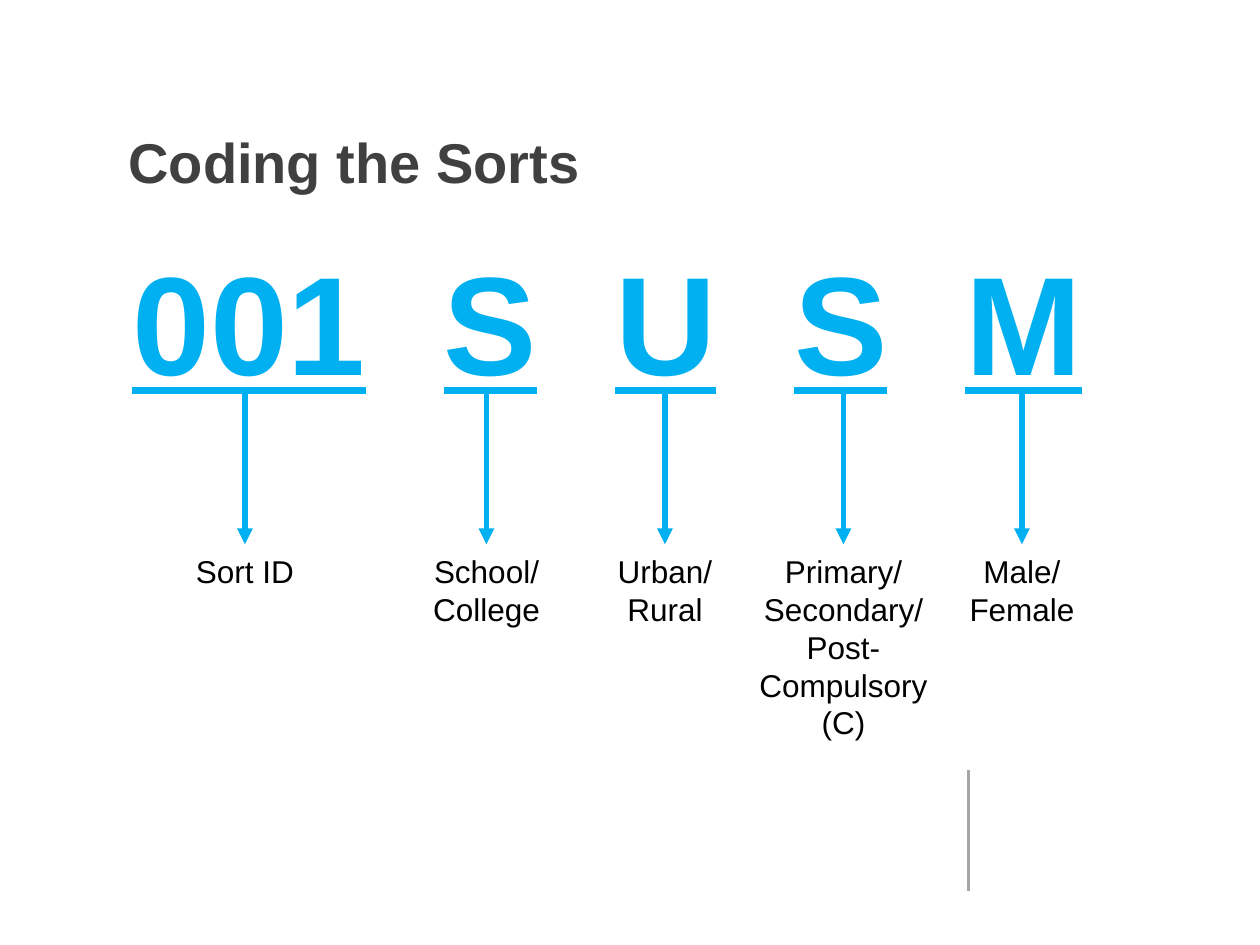
from lxml.etree import SubElement
from pptx import Presentation
from pptx.dml.color import RGBColor as RGB
from pptx.enum.shapes import MSO_CONNECTOR as Conn
from pptx.enum.text import MSO_ANCHOR as Anchor, MSO_AUTO_SIZE as Fit, PP_ALIGN as Align
from pptx.oxml.ns import qn
from pptx.util import Pt

HUES = {"code": "00B0F0", "title": "404040", "label": "000000", "rule": "A6A6A6"}


def style(font, hue, **values):
    font.name = "Arial"
    font.color.rgb = RGB.from_string(HUES[hue])
    for key, val in values.items():
        setattr(font, key, val)


def draw(x, top, end, hue, width):
    """Draw a vertical line without shadow and return its line element."""
    line = slide.shapes.add_connector(Conn.STRAIGHT, Pt(x), Pt(top), Pt(x), Pt(end))
    line.line.color.rgb = RGB.from_string(HUES[hue])
    line.line.width = Pt(width)
    SubElement(line._element.spPr, qn("a:effectLst"))
    return line.line._get_or_add_ln()


deck = Presentation()
deck.slide_width, deck.slide_height = Pt(720), Pt(540)
slide = deck.slides.add_slide(deck.slide_layouts[1])
title, body = slide.placeholders

# Title and code
places = [(title, (66.2, 29.7, 544.3, 85)), (body, (68.4, 131, 581.8, 300.2))]
for shape, box in places:
    shape.left, shape.top, shape.width, shape.height = map(Pt, box)
    shape.text_frame.auto_size = Fit.NONE

title.text_frame.text = "Coding the Sorts"
title.text_frame.vertical_anchor = Anchor.BOTTOM
head = title.text_frame.paragraphs[0]
head.alignment = Align.LEFT
style(head.font, "title", size=Pt(32), bold=True)

code = body.text_frame.paragraphs[0]
code.space_before = Pt(0)
props = code._p.get_or_add_pPr()
props.set("marL", "0")
props.set("indent", "0")
SubElement(props, qn("a:buNone"))

# Each part of the code: text, arrow centre, label lines
parts = [
    ("001", 140, ["Sort ID"]),
    ("S", 278, ["School/", "College"]),
    ("U", 380, ["Urban/", "Rural"]),
    ("S", 482, ["Primary/", "Secondary/", "Post-Compulsory (C)"]),
    ("M", 584, ["Male/", "Female"]),
]
for i, (mark, x, lines) in enumerate(parts):
    for text in ([" ", mark] if i else [mark]):
        run = code.add_run()
        run.text = text
        style(run.font, "code", size=Pt(80), bold=True, underline=text == mark)
        if text == " ":
            # Letter spacing doubles the width of the gap
            run._r.get_or_add_rPr().set("spc", "2224")

    arrow = draw(x, 221, 311, "code", 3)
    SubElement(arrow, qn("a:tailEnd"), type="triangle")

    rows = 5 if len(lines) == 3 else len(lines)
    label = slide.shapes.add_textbox(Pt(x - 60), Pt(312), Pt(120), Pt(7.2 + 21.8 * rows))
    frame = label.text_frame
    frame.word_wrap = True
    frame.auto_size = Fit.SHAPE_TO_FIT_TEXT
    frame.text = "\n".join(lines)
    for par in frame.paragraphs:
        par.alignment = Align.CENTER
        style(par.font, "label", size=Pt(18))

draw(553.5, 440, 509, "rule", 1.5)

deck.save("out.pptx")
